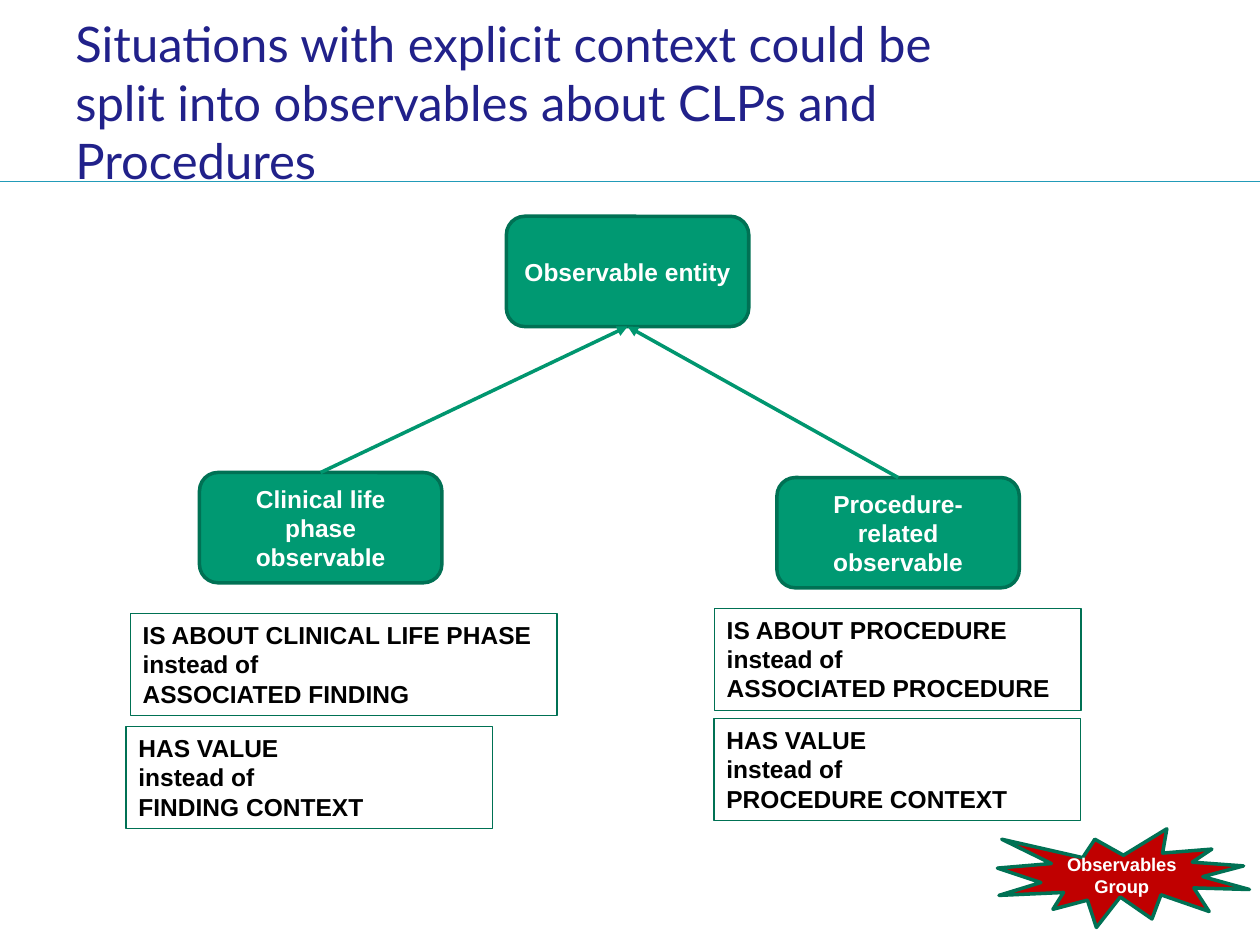
from pptx import Presentation
from pptx.dml.color import RGBColor
from pptx.enum.shapes import MSO_CONNECTOR, MSO_SHAPE
from pptx.enum.text import MSO_ANCHOR, PP_ALIGN
from pptx.oxml.ns import qn
from pptx.util import Pt
from lxml.etree import SubElement

WHITE = RGBColor(0xFF, 0xFF, 0xFF)
BLACK = RGBColor(0x00, 0x00, 0x00)
NAVY = RGBColor(0x21, 0x21, 0x8A)
TEAL = RGBColor(0x22, 0x9B, 0xB8)
GREEN = RGBColor(0x00, 0x99, 0x72)
DARK_GREEN = RGBColor(0x00, 0x71, 0x54)
ARROW_GREEN = RGBColor(0x00, 0x96, 0x6F)
RED = RGBColor(0xC0, 0x00, 0x00)

NODE_WIDTH, NODE_HEIGHT = 138.5, 63
NOTE_HEIGHT = 58.3


def add_title(slide, text):
    box = slide.shapes.add_textbox(Pt(36), Pt(14.4), Pt(526.3), Pt(87.1))
    frame = box.text_frame
    frame.word_wrap = True
    frame.vertical_anchor = MSO_ANCHOR.MIDDLE
    frame.margin_top = frame.margin_bottom = Pt(7.2)
    frame.text = text
    font = frame.paragraphs[0].runs[0].font
    font.name, font.size, font.color.rgb = "Lato", Pt(28), NAVY


def add_box(slide, kind, bounds, text, fill, border, color, size, alignment, anchor):
    shape = slide.shapes.add_shape(kind, *map(Pt, bounds))
    shape.shadow.inherit = False
    if fill is None:
        shape.fill.background()
    else:
        shape.fill.solid()
        shape.fill.fore_color.rgb = fill
    shape.line.color.rgb = DARK_GREEN
    shape.line.width = Pt(border)
    frame = shape.text_frame
    frame.word_wrap = True
    frame.vertical_anchor = anchor
    frame.text = text
    for paragraph in frame.paragraphs:
        paragraph.alignment = alignment
        paragraph.line_spacing = Pt(size * 1.2)
        for run in paragraph.runs:
            font = run.font
            font.name, font.size, font.bold = "Arial", Pt(size), True
            font.color.rgb = color
    return shape


def add_node(slide, left, top, text):
    return add_box(slide, MSO_SHAPE.ROUNDED_RECTANGLE, (left, top, NODE_WIDTH, NODE_HEIGHT),
                   text, GREEN, 2, WHITE, 14, PP_ALIGN.CENTER, MSO_ANCHOR.MIDDLE)


def add_note(slide, left, top, width, text):
    add_box(slide, MSO_SHAPE.RECTANGLE, (left, top, width, NOTE_HEIGHT),
            text, None, 0.75, BLACK, 14, PP_ALIGN.LEFT, MSO_ANCHOR.TOP)


def add_burst(slide, bounds, text):
    add_box(slide, MSO_SHAPE.EXPLOSION1, bounds, text, RED, 2, WHITE, 10.5,
            PP_ALIGN.CENTER, MSO_ANCHOR.MIDDLE)


def add_line(slide, start, end, color, width):
    line = slide.shapes.add_connector(MSO_CONNECTOR.STRAIGHT, *map(Pt, start + end))
    line.line.color.rgb = color
    line.line.width = Pt(width)
    SubElement(line._element.spPr, qn("a:effectLst"))
    return line


def add_arrow(slide, child, parent):
    arrow = add_line(slide, (0, 0), (0, 0), ARROW_GREEN, 2)
    arrow.begin_connect(child, 0)
    arrow.end_connect(parent, 2)
    SubElement(arrow.line._get_or_add_ln(), qn("a:tailEnd"), type="triangle")


def main():
    presentation = Presentation()
    presentation.slide_width, presentation.slide_height = Pt(720), Pt(540)
    slide = presentation.slides.add_slide(presentation.slide_layouts[6])

    add_line(slide, (0, 103.7), (720, 103.7), TEAL, 0.75)
    add_title(slide, "Situations with explicit context could be split into "
                     "observables about CLPs and Procedures")

    procedure = add_node(slide, 444, 272.9, "Procedure-related observable")
    clinical = add_node(slide, 114, 270, "Clinical life phase observable")
    entity = add_node(slide, 289.4, 123.6, "Observable entity")
    for child in (procedure, clinical):
        add_arrow(slide, child, entity)

    notes = [
        (408.2, 347.6, 209.5, "IS ABOUT PROCEDURE\ninstead of\nASSOCIATED PROCEDURE"),
        (74.4, 350.6, 244, "IS ABOUT CLINICAL LIFE PHASE instead of\vASSOCIATED FINDING"),
        (408, 410.6, 209.5, "HAS VALUE\ninstead of\nPROCEDURE CONTEXT"),
        (72, 415.2, 209.5, "HAS VALUE\ninstead of\nFINDING CONTEXT"),
    ]
    for left, top, width, text in notes:
        add_note(slide, left, top, width, text)

    add_burst(slide, (570, 473.6, 144, 56.4), "Observables Group")
    presentation.save("out.pptx")


if __name__ == "__main__":
    main()
